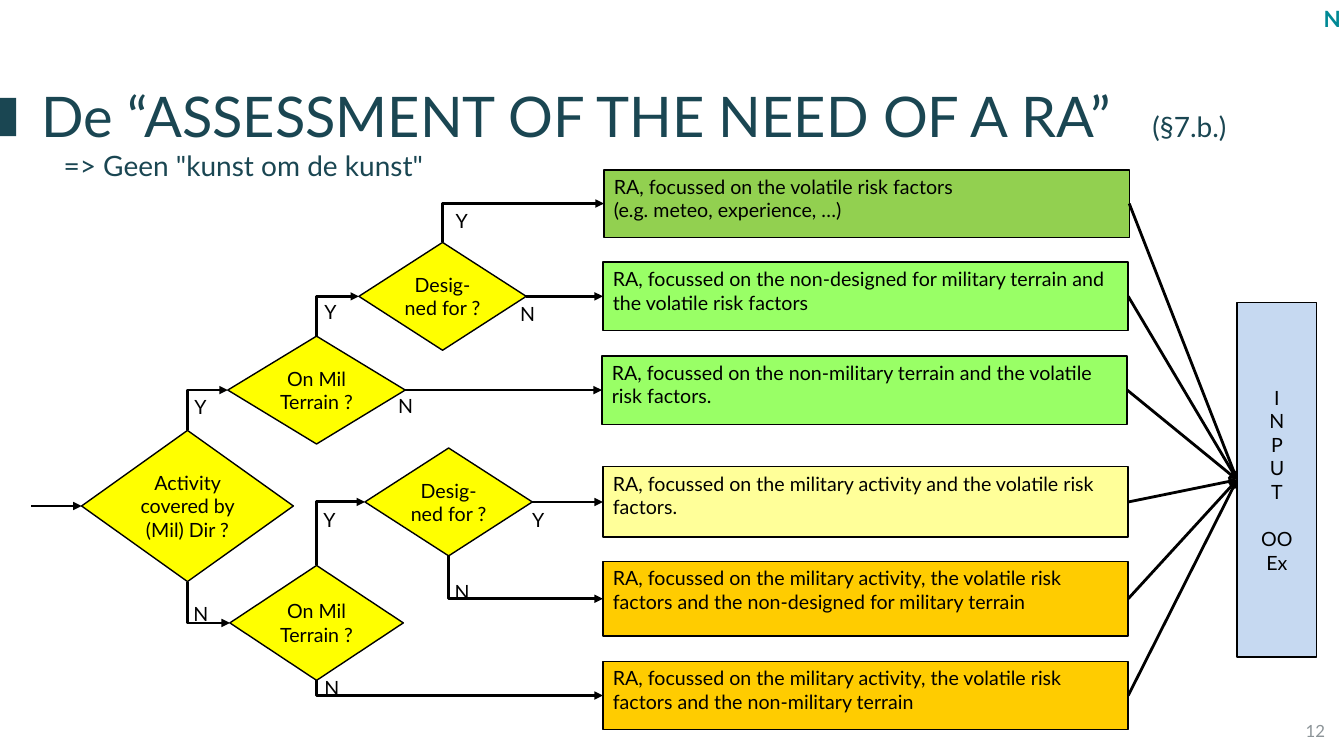
from pptx import Presentation
from pptx.dml.color import RGBColor
from pptx.enum.shapes import MSO_CONNECTOR as Link, MSO_SHAPE as Preset
from pptx.enum.text import MSO_ANCHOR as Anchor, MSO_AUTO_SIZE as AutoSize, PP_ALIGN as Align
from pptx.oxml.ns import qn
from pptx.util import Inches, Pt
from lxml.etree import SubElement

COLORS = {
    "black": "000000", "petrol": "1A4652", "teal": "008995", "grey": "8C9498",
    "yellow": "FFFF00", "olive": "92D050", "lime": "99FF66", "cream": "FFFF99",
    "orange": "FFCC00", "sky": "C6D9F1",
}
TOP, LEFT, BOTTOM, RIGHT = range(4)

QUESTIONS = {
    "covered": ("Activity covered by (Mil) Dir ?", 0.81, 5.02, 2.1, 1.5),
    "terrain yes": ("On Mil Terrain ?", 2.26, 3.87, 1.76, 1.07),
    "terrain no": ("On Mil Terrain ?", 2.28, 6.18, 1.72, 1.14),
    "designed yes": ("Desig-ned for ?", 3.56, 2.94, 1.66, 1.07),
    "designed no": ("Desig-ned for ?", 3.62, 4.98, 1.66, 1.07),
}
OUTCOMES = {
    "volatile": (["RA, focussed on the volatile risk factors",
                  "(e.g. meteo, experience, …)"], 5.99, 2.02, 0.67, "olive"),
    "non-designed": (["RA, focussed on the non-designed for military terrain and "
                      "the volatile risk factors"], 5.98, 2.94, 0.68, "lime"),
    "non-military": (["RA, focussed on the non-military terrain and the volatile "
                      "risk factors."], 5.97, 3.87, 0.68, "lime"),
    "activity": (["RA, focussed on the military activity and the volatile risk "
                  "factors."], 5.98, 4.98, 0.7, "cream"),
    "activity, non-designed": (["RA, focussed on the military activity, the volatile risk "
                                "factors and the non-designed for military terrain"],
                               5.98, 5.94, 0.74, "orange"),
    "activity, non-military": (["RA, focussed on the military activity, the volatile risk "
                                "factors and the non-military terrain"],
                               5.98, 6.9, 0.68, "orange"),
}
BRANCHES = [
    ("covered", TOP, "terrain yes"),
    ("covered", BOTTOM, "terrain no"),
    ("terrain yes", TOP, "designed yes"),
    ("terrain yes", RIGHT, "non-military"),
    ("terrain no", TOP, "designed no"),
    ("terrain no", BOTTOM, "activity, non-military"),
    ("designed yes", TOP, "volatile"),
    ("designed yes", RIGHT, "non-designed"),
    ("designed no", RIGHT, "activity"),
    ("designed no", BOTTOM, "activity, non-designed"),
]
ANSWERS = [
    ("Y", 1.83, 3.87), ("N", 1.82, 5.92), ("Y", 3.12, 2.93), ("N", 3.85, 3.86),
    ("Y", 3.11, 4.99), ("N", 3.12, 6.66), ("Y", 4.42, 2.02), ("N", 5.06, 2.95),
    ("Y", 5.18, 4.99), ("N", 4.41, 5.7),
]


def rgb(name):
    return RGBColor.from_string(COLORS[name])


def add_span(para, text, size=14, color="black", bold=False):
    span = para.add_run()
    span.text = text
    for name, value in {"name": "Lato", "size": Pt(size), "bold": bold}.items():
        setattr(span.font, name, value)
    span.font.color.rgb = rgb(color)


def write(shape, lines, align=Align.LEFT, anchor=Anchor.TOP, **style):
    frame = shape.text_frame
    frame.word_wrap = True
    frame.vertical_anchor = anchor
    for index, line in enumerate(lines):
        para = frame.add_paragraph() if index else frame.paragraphs[0]
        para.alignment = align
        add_span(para, line, **style)
    return frame


def add_label(page, text, left, top, width=0.4, height=0.3, **style):
    box = page.shapes.add_textbox(*map(Inches, (left, top, width, height)))
    write(box, [text], **style)


def add_block(page, preset, left, middle, width, height, color, outlined=True):
    block = page.shapes.add_shape(
        preset, *map(Inches, (left, middle - height / 2, width, height)))
    block.shadow.inherit = False
    block.fill.solid()
    block.fill.fore_color.rgb = rgb(color)
    if outlined:
        block.line.color.rgb = rgb("black")
        block.line.width = Pt(1)
    else:
        block.line.fill.background()
    return block


def add_question(page, text, left, middle, width, height):
    diamond = add_block(page, Preset.DIAMOND, left, middle, width, height, "yellow")
    frame = write(diamond, [text], Align.CENTER, Anchor.MIDDLE)
    for side in ("left", "top", "right", "bottom"):
        setattr(frame, f"margin_{side}", 0)
    return diamond


def add_outcome(page, lines, left, middle, height, color):
    box = add_block(page, Preset.RECTANGLE, left, middle, 5.21, height, color)
    write(box, lines)
    return box


def add_arrow(page, *ends):
    arrow = page.shapes.add_connector(Link.STRAIGHT, *map(Inches, ends or (0, 0, 0, 0)))
    arrow.line.color.rgb = rgb("black")
    arrow.line.width = Pt(2)
    SubElement(arrow.line._get_or_add_ln(), qn("a:tailEnd"), type="triangle")
    SubElement(arrow._element.spPr, qn("a:effectLst"))
    return arrow


def bend(arrow):
    across, down = arrow.end_x - arrow.begin_x, arrow.end_y - arrow.begin_y
    center_x, center_y = arrow.begin_x + across // 2, arrow.begin_y + down // 2
    width, height = abs(down), abs(across)
    frame = {"left": center_x - width // 2, "top": center_y - height // 2,
             "width": width, "height": height}
    for name, value in frame.items():
        setattr(arrow, name, value)
    properties = arrow._element.spPr
    properties.find(qn("a:prstGeom")).set("prst", "bentConnector2")
    upward = down < 0
    turn = {"rot": "5400000" if upward else "16200000",
            "flipH": "1", "flipV": "1" if upward else "0"}
    for name, value in turn.items():
        properties.find(qn("a:xfrm")).set(name, value)


def link(page, source, side, target):
    arrow = add_arrow(page)
    arrow.begin_connect(source, side)
    arrow.end_connect(target, LEFT)
    if side in (TOP, BOTTOM):
        bend(arrow)


def add_title(page):
    title = page.shapes.title
    frame = {"left": 0.31, "top": 0.76, "width": 12.35, "height": 1.11}
    for name, value in frame.items():
        setattr(title, name, Inches(value))
    text = title.text_frame
    text.auto_size = AutoSize.NONE
    text.word_wrap = True
    text.vertical_anchor = Anchor.TOP
    heading, motto = text.paragraphs[0], text.add_paragraph()
    for para in (heading, motto):
        para.alignment = Align.LEFT
    stops = SubElement(heading._p.get_or_add_pPr(), qn("a:tabLst"))
    SubElement(stops, qn("a:tab"), pos=str(Inches(11.02)), algn="l")
    motto._p.get_or_add_pPr().set("marL", str(Inches(0.22)))
    add_span(heading, "De “ASSESSMENT OF THE NEED OF A RA”", 40, "petrol")
    add_span(heading, "\t(§7.b.)", 20, "petrol")
    add_span(motto, '=> Geen "kunst om de kunst"', 20, "petrol")


def add_input(page):
    box = add_block(page, Preset.RECTANGLE, 12.27, 4.76, 0.79, 3.52, "sky")
    frame = write(box, [*"INPUT", "OO", "Ex"], Align.CENTER, Anchor.MIDDLE)
    frame.paragraphs[5].space_before = Pt(16.8)
    return box


def main():
    deck = Presentation()
    deck.slide_width, deck.slide_height = Inches(13.33), Inches(7.5)
    page = deck.slides.add_slide(deck.slide_layouts[5])
    add_block(page, Preset.RECTANGLE, 0, 1.16, 0.16, 0.38, "petrol", outlined=False)
    add_title(page)
    steps = {name: add_question(page, *values) for name, values in QUESTIONS.items()}
    steps.update((name, add_outcome(page, *values)) for name, values in OUTCOMES.items())
    result = add_input(page)
    add_arrow(page, 0.31, 5.02, 0.81, 5.02)
    for source, side, target in BRANCHES:
        link(page, steps[source], side, steps[target])
    for name in OUTCOMES:
        link(page, steps[name], RIGHT, result)
    for answer in ANSWERS:
        add_label(page, *answer)
    add_label(page, "12", 10.24, 7.05, 3, 0.4, align=Align.RIGHT,
              anchor=Anchor.MIDDLE, size=12, color="grey")
    add_label(page, "N", 13.03, 0, 0.3, 0.37, size=16, color="teal", bold=True)
    deck.save("out.pptx")


if __name__ == "__main__":
    main()
